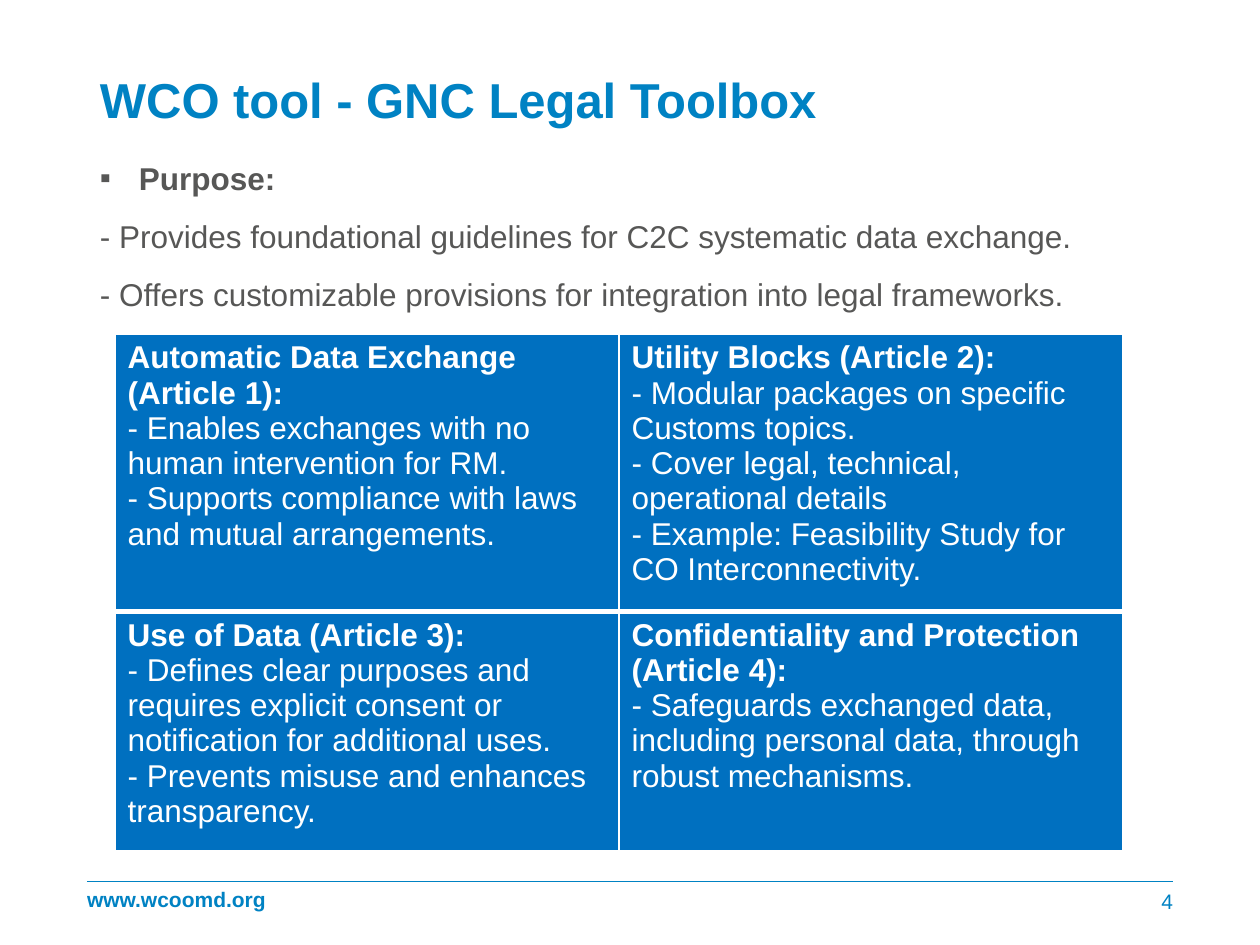
from dataclasses import dataclass

from lxml import etree
from pptx import Presentation
from pptx.dml.color import RGBColor
from pptx.enum.shapes import MSO_CONNECTOR
from pptx.enum.text import MSO_ANCHOR, PP_ALIGN
from pptx.oxml.ns import qn
from pptx.util import Emu, Pt

STRAIGHT = MSO_CONNECTOR.STRAIGHT
TOP, MIDDLE = MSO_ANCHOR.TOP, MSO_ANCHOR.MIDDLE
LEFT, RIGHT = PP_ALIGN.LEFT, PP_ALIGN.RIGHT

PX_PER_INCH = 126
BRAND, GREY, CELL, WHITE = "0082C3", "575756", "0070C0", "FFFFFF"
FONT = "Arial"
MARGIN_LEFT, MARGIN_RIGHT = 87, 1173
PAD_X, PAD_Y = 13, 6
BULLET_INDENT = 39


@dataclass(frozen=True)
class Line:
    text: str
    size: int
    color: str
    bold: bool = False
    bullet: bool = False
    space_before: int = 0
    spacing: float = 1.0
    align: PP_ALIGN = LEFT


@dataclass(frozen=True)
class TextArea:
    left: int
    top: int
    width: int
    height: int
    lines: list[Line]
    anchor: MSO_ANCHOR = TOP
    pad_left: int = PAD_X
    pad_right: int = PAD_X


@dataclass(frozen=True)
class Article:
    heading: str
    points: list[str]


def px(length: int) -> Emu:
    return Emu(round(length * 914400 / PX_PER_INCH))


def rgb(color: str) -> RGBColor:
    return RGBColor.from_string(color)


def write_lines(frame, lines: list[Line]) -> None:
    for index, line in enumerate(lines):
        para = frame.paragraphs[0] if index == 0 else frame.add_paragraph()
        para.text = line.text
        para.alignment = line.align
        para.line_spacing = line.spacing
        para.space_before = Pt(line.space_before)
        if line.bullet:
            props = para._p.get_or_add_pPr()
            props.set("marL", str(px(BULLET_INDENT)))
            props.set("indent", str(-px(BULLET_INDENT)))
            etree.SubElement(props, qn("a:buFont"), typeface=FONT)
            etree.SubElement(props, qn("a:buChar"), char="▪")
        para.font.name = FONT
        para.font.size = Pt(line.size)
        para.font.bold = line.bold
        para.font.color.rgb = rgb(line.color)


def draw_text(page, area: TextArea) -> None:
    box = page.shapes.add_textbox(px(area.left), px(area.top), px(area.width), px(area.height))
    frame = box.text_frame
    frame.word_wrap = True
    frame.vertical_anchor = area.anchor
    frame.margin_left, frame.margin_right = px(area.pad_left), px(area.pad_right)
    frame.margin_top = frame.margin_bottom = px(PAD_Y)
    write_lines(frame, area.lines)


def draw_rule(page, left: int, right: int, y: int) -> None:
    rule = page.shapes.add_connector(STRAIGHT, px(left), px(y), px(right), px(y))
    rule.line.color.rgb = rgb(BRAND)
    rule.line.width = Pt(0.5)
    etree.SubElement(rule._element.spPr, qn("a:effectLst"))


def set_borders(cell, widths: dict[str, int]) -> None:
    props = cell._tc.get_or_add_tcPr()
    for side, width in widths.items():
        border = etree.SubElement(props, qn(f"a:ln{side}"), w=str(Pt(width)))
        fill = etree.SubElement(border, qn("a:solidFill"))
        etree.SubElement(fill, qn("a:srgbClr"), val=WHITE)


def draw_articles(page, left: int, top: int, column_width: int,
                  row_heights: list[int], rows: list[list[Article]]) -> None:
    columns = len(rows[0])
    table = page.shapes.add_table(len(rows), columns, px(left), px(top),
                                  px(column_width * columns), px(sum(row_heights))).table
    for column in table.columns:
        column.width = px(column_width)
    for row_index, articles in enumerate(rows):
        table.rows[row_index].height = px(row_heights[row_index])
        first = row_index == 0
        borders = {"L": 1, "R": 1, "T": 1 if first else 3, "B": 3 if first else 1}
        for column_index, article in enumerate(articles):
            cell = table.cell(row_index, column_index)
            set_borders(cell, borders)
            cell.fill.solid()
            cell.fill.fore_color.rgb = rgb(CELL)
            lines = [Line(article.heading, 18, WHITE, bold=True)]
            lines += [Line(point, 18, WHITE) for point in article.points]
            write_lines(cell.text_frame, lines)


TITLE = TextArea(MARGIN_LEFT, 64, 983, 111, [Line("WCO tool - GNC Legal Toolbox", 28, BRAND, bold=True)])
PURPOSE = TextArea(MARGIN_LEFT, 150, MARGIN_RIGHT - MARGIN_LEFT, 159, [
    Line("Purpose:", 18, GREY, bold=True, bullet=True, spacing=1.07),
    Line("- Provides foundational guidelines for C2C systematic data exchange.", 18, GREY,
         space_before=10, spacing=1.07),
    Line("- Offers customizable provisions for integration into legal frameworks.", 18, GREY,
         space_before=10, spacing=1.07),
])
WEBSITE = TextArea(MARGIN_LEFT, 876, 184, 50,
                   [Line("www.wcoomd.org", 12, BRAND, bold=True, spacing=0.9)],
                   MIDDLE, pad_left=0, pad_right=0)
PAGE_NUMBER = TextArea(1093, 876, 80, 50, [Line("4", 12, BRAND, align=RIGHT)], MIDDLE, pad_right=0)

ARTICLES = [
    [
        Article("Automatic Data Exchange (Article 1):", [
            "- Enables exchanges with no human intervention for RM.",
            "- Supports compliance with laws and mutual arrangements.",
        ]),
        Article("Utility Blocks (Article 2):", [
            "- Modular packages on specific Customs topics.",
            "- Cover legal, technical, operational details",
            "- Example: Feasibility Study for CO Interconnectivity.",
        ]),
    ],
    [
        Article("Use of Data (Article 3):", [
            "- Defines clear purposes and requires explicit consent or notification for additional uses.",
            "- Prevents misuse and enhances transparency.",
        ]),
        Article("Confidentiality and Protection (Article 4):", [
            "- Safeguards exchanged data, including personal data, through robust mechanisms.",
        ]),
    ],
]


def main() -> None:
    deck = Presentation()
    deck.slide_width, deck.slide_height = px(1260), px(945)
    page = deck.slides.add_slide(deck.slide_layouts[6])
    draw_rule(page, MARGIN_LEFT, MARGIN_RIGHT, 881)
    for area in (WEBSITE, TITLE, PAGE_NUMBER, PURPOSE):
        draw_text(page, area)
    draw_articles(page, 115, 334, 504, [259, 224], ARTICLES)
    deck.save("out.pptx")


if __name__ == "__main__":
    main()
